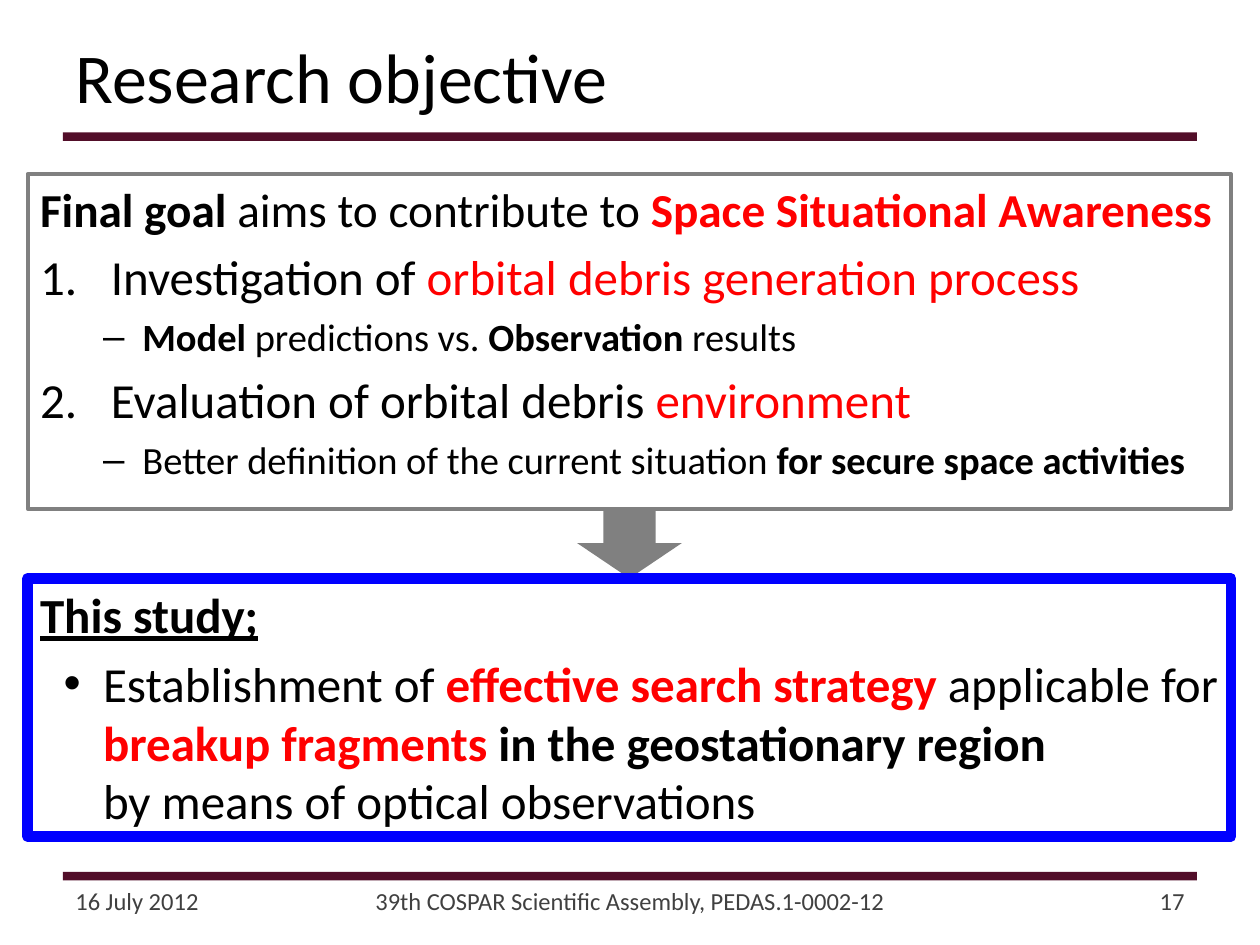
"""Build the research objective slide."""
from dataclasses import dataclass

from lxml import etree
from pptx import Presentation
from pptx.dml.color import RGBColor
from pptx.enum.shapes import MSO_SHAPE
from pptx.enum.text import MSO_ANCHOR, PP_ALIGN
from pptx.oxml.ns import qn
from pptx.slide import Slide
from pptx.util import Pt

RECT, ARROW = MSO_SHAPE.RECTANGLE, MSO_SHAPE.DOWN_ARROW
TOP, MIDDLE = MSO_ANCHOR.TOP, MSO_ANCHOR.MIDDLE
LEFT, CENTER, RIGHT, JUST = PP_ALIGN.LEFT, PP_ALIGN.CENTER, PP_ALIGN.RIGHT, PP_ALIGN.JUSTIFY
FONT = "Calibri"
HUES = {
    "black": "000000",
    "red": "FF0000",
    "blue": "0000FF",
    "gray": "808080",
    "dark": "404040",
    "wine": "520E29",
}


@dataclass
class Run:
    text: str
    hue: str = "black"
    bold: bool = False
    under: bool = False
    wrap: bool = False


@dataclass
class Para:
    runs: list[Run]
    size: float
    align: PP_ALIGN = LEFT
    mark: str = ""
    left: float = 0
    hang: float = 0
    level: int = 0
    gap: float = 0.2


@dataclass
class Box:
    x: float
    y: float
    wide: float
    high: float
    fill: str = ""
    line: str = ""
    width: float = 0
    kind: MSO_SHAPE = RECT
    paras: tuple[Para, ...] = ()
    anchor: MSO_ANCHOR = TOP


def color(hue: str) -> RGBColor:
    """Return the named colour."""
    return RGBColor.from_string(HUES[hue])


def add_mark(node: etree._Element, para: Para) -> None:
    """Set the indent and the bullet or number."""
    node.set("marL", str(Pt(para.left)))
    node.set("indent", str(-Pt(para.hang)))
    if para.mark == "1.":
        etree.SubElement(node, qn("a:buAutoNum"), type="arabicPeriod")
    else:
        etree.SubElement(node, qn("a:buFont"), typeface="Arial")
        etree.SubElement(node, qn("a:buChar"), char=para.mark)


def draw_box(slide: Slide, box: Box) -> None:
    """Draw one shape or text box with its text."""
    place = Pt(box.x), Pt(box.y), Pt(box.wide), Pt(box.high)
    if box.fill or box.line:
        shape = slide.shapes.add_shape(box.kind, *place)
        shape.shadow.inherit = False
    else:
        shape = slide.shapes.add_textbox(*place)
    if box.fill:
        shape.fill.solid()
        shape.fill.fore_color.rgb = color(box.fill)
    else:
        shape.fill.background()
    if box.line:
        shape.line.color.rgb = color(box.line)
        shape.line.width = Pt(box.width)
    else:
        shape.line.fill.background()
    frame = shape.text_frame
    frame.word_wrap = True
    frame.vertical_anchor = box.anchor
    for i, para in enumerate(box.paras):
        block = frame.add_paragraph() if i else frame.paragraphs[0]
        block.alignment = para.align
        block.level = para.level
        block.space_before = Pt(para.gap * para.size)
        if para.mark:
            add_mark(block._p.get_or_add_pPr(), para)
        for item in para.runs:
            run = block.add_run()
            run.text = item.text
            font = run.font
            font.name, font.size = FONT, Pt(para.size)
            font.bold, font.underline = item.bold, item.under
            font.color.rgb = color(item.hue)
            if item.wrap:
                block.add_line_break()


def label(text: str, x: float, wide: float, align: PP_ALIGN) -> Box:
    """Return a footer text box."""
    para = Para([Run(text, "dark")], 14, align, gap=0)
    return Box(x, 500.4, wide, 28.8, paras=(para,), anchor=MIDDLE)


def topic(*runs: Run) -> Para:
    """Return a numbered goal."""
    return Para(list(runs), 28, JUST, "1.", 40.5, 40.5)


def detail(*runs: Run) -> Para:
    """Return a dashed point below a goal."""
    return Para(list(runs), 22, JUST, "–", 58.5, 22.5, 1)


GOAL = (
    Para([
        Run("Final goal ", bold=True),
        Run("aims to contribute to "),
        Run("Space Situational Awareness", "red", True),
    ], 27, JUST),
    topic(Run("Investigation of "), Run("orbital debris generation process", "red")),
    detail(
        Run("Model", bold=True),
        Run(" predictions vs. "),
        Run("Observation", bold=True),
        Run(" results"),
    ),
    topic(Run("Evaluation of orbital debris "), Run("environment", "red")),
    detail(
        Run("Better definition of the current situation "),
        Run("for secure space activities", bold=True),
    ),
)
STUDY = (
    Para([Run("This study;", bold=True, under=True)], 28),
    Para([
        Run("Establishment of "),
        Run("effective search strategy ", "red", True),
        Run("applicable for "),
        Run("breakup fragments ", "red", True),
        Run("in the geostationary region ", bold=True, wrap=True),
        Run("by means of optical observations"),
    ], 28, mark="•", left=36, hang=22.5),
)
TITLE = Para([Run("Research objective")], 40, gap=0)
BOXES = (
    *(Box(36, y, 648, 5, "wine") for y in (498.2, 75.6)),
    Box(36, 10.8, 648, 64.8, paras=(TITLE,), anchor=MIDDLE),
    label("17", 556.6, 127.4, RIGHT),
    Box(15.8, 99.4, 687.6, 191.3, line="gray", width=2.25, paras=GOAL),
    Box(329.8, 290.2, 59.8, 40.3, "gray", kind=ARROW),
    Box(15.8, 330.5, 687.6, 147.6, line="blue", width=6, paras=STUDY),
    label("16 July 2012", 36, 122.4, LEFT),
    label("39th COSPAR Scientific Assembly, PEDAS.1-0002-12", 176.4, 367.2, CENTER),
)


def main() -> None:
    """Build and save the slide."""
    deck = Presentation()
    deck.slide_width, deck.slide_height = Pt(720), Pt(540)
    slide = deck.slides.add_slide(deck.slide_layouts[6])
    for box in BOXES:
        draw_box(slide, box)
    deck.save("out.pptx")


if __name__ == "__main__":
    main()
